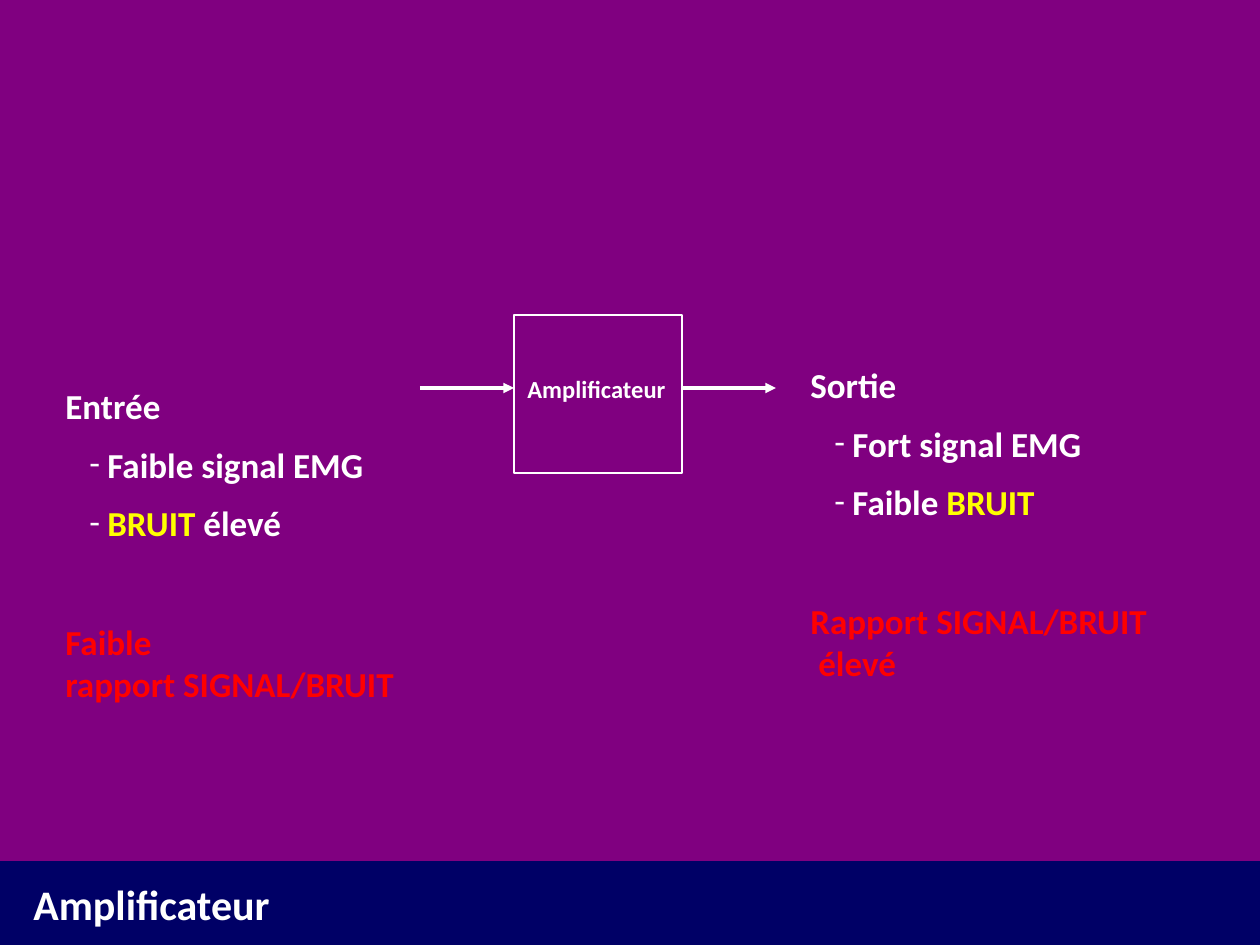
from lxml import etree
from pptx import Presentation, util as u
from pptx.dml.color import RGBColor
from pptx.enum import shapes, text
from pptx.oxml.ns import qn

PX = u.Inches(1) // 126
WHITE, YELLOW, RED = "FFFFFF", "FFFF00", "FF0000"
NAVY, PURPLE = "000066", "800080"

SLIDE = (1260, 945)
PANEL = (0, 0, 1260, 861)
BLOCK = (514, 315, 168, 158)
ARROW_Y, ARROW_LENGTH = 388, 94
BULLET_LEFT, BULLET_HANG = 42, 18
LIST_GAP, CONCLUSION_GAP = 9.6, 43.6

# Each paragraph: runs, then its options; "\n" in a run is a line break.
TITLE = [([("Amplificateur", WHITE)], {})]
INPUT = [
    ([("Entrée", WHITE)], {}),
    ([("Faible signal EMG", WHITE)], {"bullet": True}),
    ([("BRUIT ", YELLOW), ("élevé", WHITE)], {"bullet": True}),
    ([("Faible \nrapport SIGNAL/BRUIT", RED)], {"before": CONCLUSION_GAP}),
]
OUTPUT = [
    ([("Sortie", WHITE)], {}),
    ([("Fort signal EMG", WHITE)], {"bullet": True}),
    ([("Faible ", WHITE), ("BRUIT", YELLOW)], {"bullet": True}),
    ([("Rapport SIGNAL/BRUIT\nélevé", RED)],
     {"before": CONCLUSION_GAP, "left": 8, "hang": 8}),
]
TEXTS = [
    ((21, 872, 840, 63), 24, TITLE),
    ((53, 378, 483, 352), 20, INPUT),
    ((798, 357, 462, 352), 20, OUTPUT),
    ((515, 368, 189, 43), 14, TITLE),
]


def emu(lengths):
    return [length * PX for length in lengths]


def colour(value):
    return RGBColor.from_string(value)


def set_indent(paragraph, left, hang):
    props = paragraph._p.get_or_add_pPr()
    props.set("marL", str(left * PX))
    props.set("indent", str(-hang * PX))
    return props


def add_dash(paragraph):
    props = set_indent(paragraph, BULLET_LEFT, BULLET_HANG)
    tint = etree.SubElement(props, qn("a:buClr"))
    etree.SubElement(tint, qn("a:srgbClr"), val=WHITE)
    etree.SubElement(props, qn("a:buFont"), typeface="Calibri")
    etree.SubElement(props, qn("a:buChar"), char="-")


def add_run(paragraph, wording, size, tint):
    for i, line in enumerate(wording.split("\n")):
        if i:
            paragraph.add_line_break()
        run = paragraph.add_run()
        run.text = line
        run.font.name = "Calibri"
        run.font.size = u.Pt(size)
        run.font.bold = True
        run.font.color.rgb = colour(tint)


def add_text(slide, place, size, paragraphs):
    frame = slide.shapes.add_textbox(*emu(place)).text_frame
    frame.word_wrap = True
    frame.auto_size = text.MSO_AUTO_SIZE.SHAPE_TO_FIT_TEXT
    for i, (runs, options) in enumerate(paragraphs):
        paragraph = frame.add_paragraph() if i else frame.paragraphs[0]
        if i:
            paragraph.space_before = u.Pt(options.get("before", LIST_GAP))
        if options.get("bullet"):
            add_dash(paragraph)
        elif "left" in options:
            set_indent(paragraph, options["left"], options["hang"])
        for wording, tint in runs:
            add_run(paragraph, wording, size, tint)


def add_rectangle(slide, place, fill=None, outline=None):
    box = slide.shapes.add_shape(shapes.MSO_SHAPE.RECTANGLE, *emu(place))
    box.shadow.inherit = False
    if fill:
        box.fill.solid()
        box.fill.fore_color.rgb = colour(fill)
    else:
        box.fill.background()
    if outline:
        box.line.color.rgb = colour(outline)
        box.line.width = u.Pt(1.5)
    else:
        box.line.fill.background()


def add_arrow(slide, start):
    ends = emu((start, ARROW_Y, start + ARROW_LENGTH, ARROW_Y))
    arrow = slide.shapes.add_connector(shapes.MSO_CONNECTOR.STRAIGHT, *ends)
    arrow.line.color.rgb = colour(WHITE)
    arrow.line.width = u.Pt(2)
    etree.SubElement(arrow.line._get_or_add_ln(), qn("a:tailEnd"), type="triangle")
    etree.SubElement(arrow._element.spPr, qn("a:effectLst"))


def main():
    deck = Presentation()
    deck.slide_width, deck.slide_height = emu(SLIDE)
    slide = deck.slides.add_slide(deck.slide_layouts[6])
    slide.background.fill.solid()
    slide.background.fill.fore_color.rgb = colour(NAVY)

    add_rectangle(slide, PANEL, fill=PURPLE)
    block_left, _, block_width, _ = BLOCK
    for start in (block_left - ARROW_LENGTH, block_left + block_width):
        add_arrow(slide, start)
    add_rectangle(slide, BLOCK, outline=WHITE)
    for place, size, paragraphs in TEXTS:
        add_text(slide, place, size, paragraphs)
    deck.save("out.pptx")


if __name__ == "__main__":
    main()
